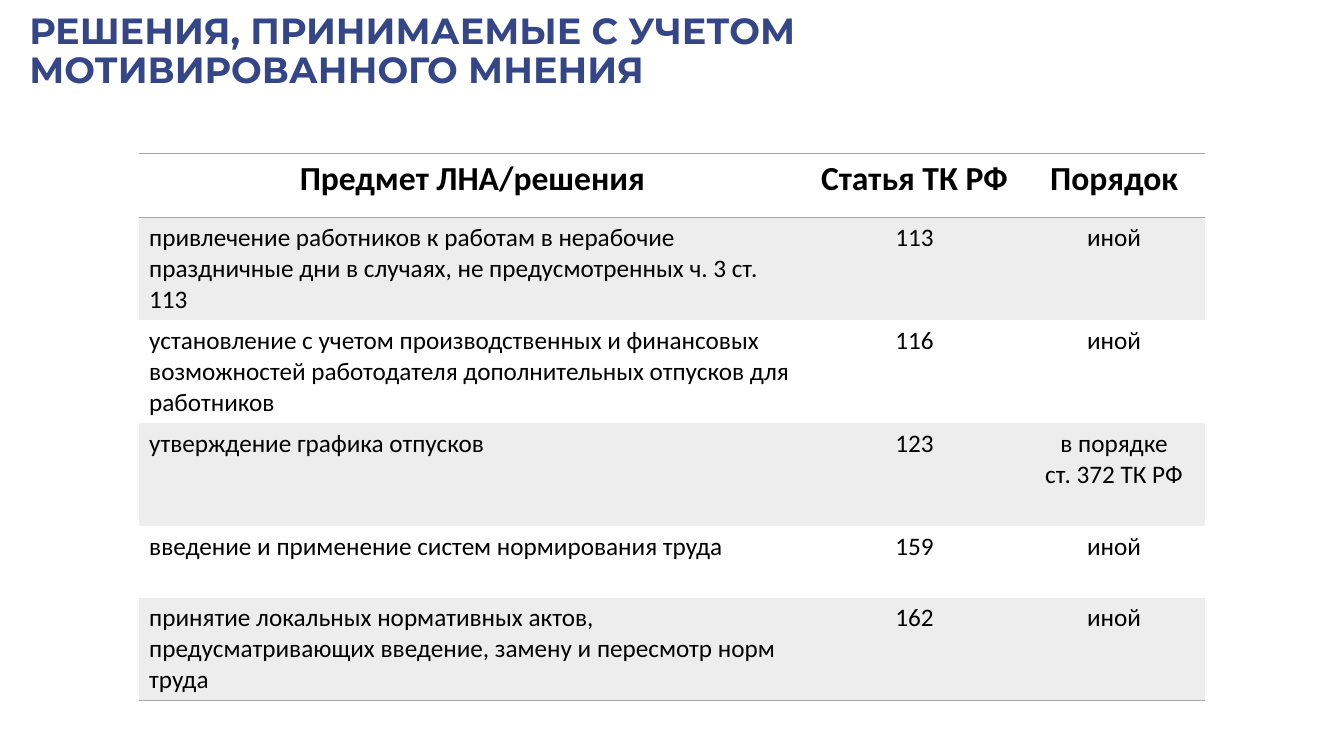
from dataclasses import dataclass

from lxml import etree
from pptx import Presentation
from pptx.dml.color import RGBColor
from pptx.enum.text import MSO_ANCHOR, MSO_AUTO_SIZE, PP_ALIGN
from pptx.oxml.ns import qn
from pptx.util import Inches, Pt

LEFT, CENTER = PP_ALIGN.LEFT, PP_ALIGN.CENTER
MIDDLE = MSO_ANCHOR.MIDDLE
NO_AUTOFIT = MSO_AUTO_SIZE.NONE
TITLE_ONLY = 5

RULE_COLOR = "A5A5A5"
BAND_COLOR = "EDEDED"
TITLE_FORMAT = {"name": "Montserrat", "size": Pt(26), "bold": True}
HEADER_FORMAT = {"name": "Calibri", "size": Pt(24), "bold": True}
BODY_FORMAT = {"name": "Calibri", "size": Pt(18), "bold": False}
COLUMN_WIDTHS = (6.61, 2.16, 1.8)


@dataclass
class Decision:
    subject: str
    article: str
    procedure: str
    height: float


HEADER = Decision("Предмет ЛНА/решения", "Статья ТК РФ", "Порядок", 0.64)
DECISIONS = [
    Decision("привлечение работников к работам в нерабочие праздничные дни "
             "в случаях, не предусмотренных ч. 3 ст. 113", "113", "иной", 1.02),
    Decision("установление с учетом производственных и финансовых возможностей "
             "работодателя дополнительных отпусков для работников", "116", "иной", 1.02),
    Decision("утверждение графика отпусков", "123", "в порядке\nст. 372 ТК РФ", 1.02),
    Decision("введение и применение систем нормирования труда", "159", "иной", 0.71),
    Decision("принятие локальных нормативных актов, предусматривающих введение, "
             "замену и пересмотр норм труда", "162", "иной", 1.02),
]


def color(value: str) -> RGBColor:
    return RGBColor.from_string(value)


def format_paragraph(para, font_format: dict, text_color: str, alignment) -> None:
    para.alignment = alignment
    for span in para.runs:
        for name, value in font_format.items():
            setattr(span.font, name, value)
        span.font.color.rgb = color(text_color)


def set_borders(cell, ruled_sides: str) -> None:
    properties = cell._tc.get_or_add_tcPr()
    for position, side in enumerate("LRTB"):
        line = etree.Element(qn(f"a:ln{side}"), w=str(Pt(1)))
        if side in ruled_sides:
            fill = etree.SubElement(line, qn("a:solidFill"))
            etree.SubElement(fill, qn("a:srgbClr"), val=RULE_COLOR)
        else:
            etree.SubElement(line, qn("a:noFill"))
        properties.insert(position, line)


def add_title(page) -> None:
    box = page.shapes.title
    box.left, box.top = Inches(0.19), Inches(0.19)
    box.width, box.height = Inches(10.41), Inches(0.66)
    frame = box.text_frame
    frame.text = "РЕШЕНИЯ, ПРИНИМАЕМЫЕ С УЧЕТОМ МОТИВИРОВАННОГО МНЕНИЯ"
    frame.auto_size, frame.word_wrap = NO_AUTOFIT, True
    frame.vertical_anchor = MIDDLE
    para = frame.paragraphs[0]
    para.line_spacing = 0.9
    format_paragraph(para, TITLE_FORMAT, "344688", LEFT)


def fill_row(table, index: int, decision: Decision) -> None:
    is_header = index == 0
    is_last = index == len(DECISIONS)
    ruled_sides = "TB" if is_header else "B" if is_last else "T" if index == 1 else ""
    table.rows[index].height = Inches(decision.height)
    texts = (decision.subject, decision.article, decision.procedure)
    for column, text in enumerate(texts):
        cell = table.cell(index, column)
        cell.text = text
        if index % 2:
            cell.fill.solid()
            cell.fill.fore_color.rgb = color(BAND_COLOR)
        else:
            cell.fill.background()
        set_borders(cell, ruled_sides)
        alignment = CENTER if is_header or column else LEFT
        for para in cell.text_frame.paragraphs:
            format_paragraph(para, HEADER_FORMAT if is_header else BODY_FORMAT,
                             "000000", alignment)


def add_decision_table(page) -> None:
    rows = [HEADER, *DECISIONS]
    table = page.shapes.add_table(
        len(rows), len(COLUMN_WIDTHS), Inches(1.38), Inches(1.52),
        Inches(sum(COLUMN_WIDTHS)), Inches(sum(row.height for row in rows))).table
    table.first_row = table.horz_banding = False
    for column, width in zip(table.columns, COLUMN_WIDTHS):
        column.width = Inches(width)
    for index, decision in enumerate(rows):
        fill_row(table, index, decision)


def main() -> None:
    deck = Presentation()
    deck.slide_width, deck.slide_height = Inches(13.33), Inches(7.5)
    page = deck.slides.add_slide(deck.slide_layouts[TITLE_ONLY])
    add_title(page)
    add_decision_table(page)
    deck.save("out.pptx")


if __name__ == "__main__":
    main()
